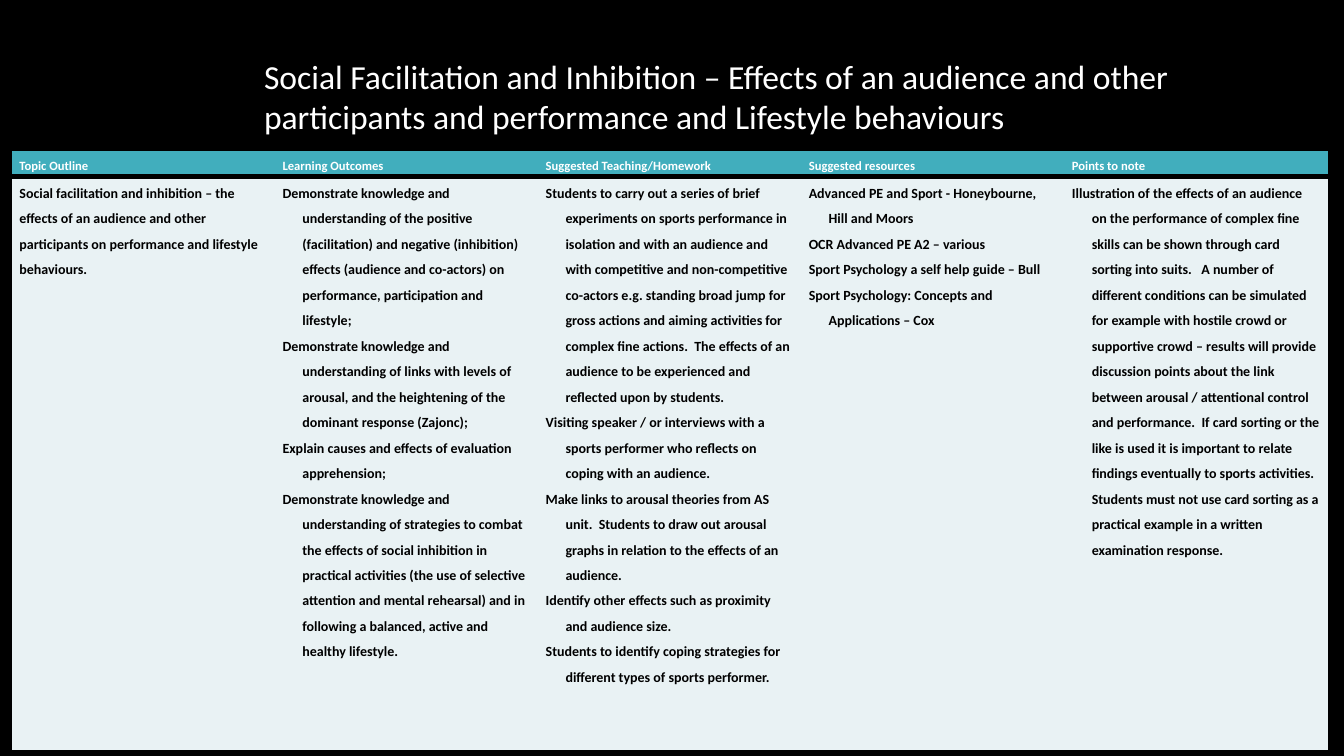
from lxml import etree
from pptx import Presentation
from pptx import util as u
from pptx.dml.color import RGBColor
from pptx.enum import text
from pptx.oxml import ns

BLACK = RGBColor(0x00, 0x00, 0x00)
WHITE = RGBColor(0xFF, 0xFF, 0xFF)
TEAL = RGBColor(0x41, 0xAE, 0xBD)
PALE = RGBColor(0xE9, 0xF2, 0xF4)
PLAIN_TABLE = "{2D5ABB26-0587-4C30-8999-92F81FD0307C}"

TITLE = ("Social Facilitation and Inhibition – Effects of an audience and other "
         "participants and performance and Lifestyle behaviours")

COLUMNS = [
    ("Topic Outline", [
        "Social facilitation and inhibition – the effects of an audience and other "
        "participants on performance and lifestyle behaviours.",
    ]),
    ("Learning Outcomes", [
        "Demonstrate knowledge and understanding of the positive (facilitation) and "
        "negative (inhibition) effects (audience and co-actors) on performance, "
        "participation and lifestyle;",
        "Demonstrate knowledge and understanding of links with levels of arousal, and "
        "the heightening of the dominant response (Zajonc);",
        "Explain causes and effects of evaluation apprehension;",
        "Demonstrate knowledge and understanding of strategies to combat the effects "
        "of social inhibition in practical activities (the use of selective attention "
        "and mental rehearsal) and in following a balanced, active and healthy "
        "lifestyle.",
    ]),
    ("Suggested Teaching/Homework", [
        "Students to carry out a series of brief experiments on sports performance in "
        "isolation and with an audience and with competitive and non-competitive "
        "co-actors e.g. standing broad jump for gross actions and aiming activities "
        "for complex fine actions.  The effects of an audience to be experienced and "
        "reflected upon by students.",
        "Visiting speaker / or interviews with a sports performer who reflects on "
        "coping with an audience.",
        "Make links to arousal theories from AS unit.  Students to draw out arousal "
        "graphs in relation to the effects of an audience.",
        "Identify other effects such as proximity and audience size.",
        "Students to identify coping strategies for different types of sports "
        "performer.",
    ]),
    ("Suggested resources", [
        "Advanced PE and Sport - Honeybourne, Hill and Moors",
        "OCR Advanced PE A2 – various",
        "Sport Psychology a self help guide – Bull",
        "Sport Psychology: Concepts and Applications – Cox",
    ]),
    ("Points to note", [
        "Illustration of the effects of an audience on the performance of complex fine "
        "skills can be shown through card sorting into suits.   A number of different "
        "conditions can be simulated for example with hostile crowd or supportive "
        "crowd – results will provide discussion points about the link between "
        "arousal / attentional control and performance.  If card sorting or the like "
        "is used it is important to relate findings eventually to sports activities.  "
        "Students must not use card sorting as a practical example in a written "
        "examination response.",
    ]),
]


class Deck:
    """Holds the presentation, its style and the current slide."""

    font = "Calibri"
    indent = u.Cm(0.5)

    def __init__(self):
        """Open a widescreen deck with one black title-only slide."""
        self.prs = Presentation()
        self.prs.slide_width, self.prs.slide_height = u.Cm(33.87), u.Cm(19.05)
        self.slide = self.prs.slides.add_slide(self.prs.slide_layouts[5])
        fill = self.slide.background.fill
        fill.solid()
        fill.fore_color.rgb = BLACK

    def run(self, p, words, size, color, bold=False):
        """Add one styled run to a paragraph."""
        r = p.add_run()
        r.text = words
        r.font.name, r.font.size, r.font.bold = self.font, u.Pt(size), bold
        r.font.color.rgb = color

    def title(self, words, left, top, width, height):
        """Place and fill the title placeholder."""
        sp = self.slide.shapes.title
        sp.left, sp.top, sp.width, sp.height = map(u.Cm, (left, top, width, height))
        tf = sp.text_frame
        tf.word_wrap = True
        tf.auto_size = text.MSO_AUTO_SIZE.NONE
        tf.vertical_anchor = text.MSO_ANCHOR.MIDDLE
        p = tf.paragraphs[0]
        p.alignment = text.PP_ALIGN.LEFT
        self.run(p, words, 24, WHITE)

    def hang(self, p):
        """Give a paragraph a hanging indent with a matching tab stop."""
        pPr = p._p.get_or_add_pPr()
        pPr.set("marL", str(self.indent))
        pPr.set("indent", str(-self.indent))
        tabs = etree.SubElement(pPr, ns.qn("a:tabLst"))
        etree.SubElement(tabs, ns.qn("a:tab"), pos=str(self.indent), algn="l")

    def rule_above(self, cell, points, color):
        """Draw a solid border along the top of a cell."""
        line = etree.Element(ns.qn("a:lnT"), w=str(u.Pt(points)))
        fill = etree.SubElement(line, ns.qn("a:solidFill"))
        etree.SubElement(fill, ns.qn("a:srgbClr"), val=str(color))
        cell._tc.get_or_add_tcPr().insert(0, line)

    def cell(self, cell, lines, size, color, fill, hanging):
        """Fill a table cell with bold paragraphs."""
        cell.margin_left = cell.margin_right = u.Cm(0.19)
        cell.margin_top = cell.margin_bottom = 0
        cell.fill.solid()
        cell.fill.fore_color.rgb = fill
        tf = cell.text_frame
        for i, words in enumerate(lines):
            p = tf.add_paragraph() if i else tf.paragraphs[0]
            if hanging:
                self.hang(p)
            p.line_spacing = 1.5
            self.run(p, words, size, color, bold=True)

    def table(self, columns, left, top, width, heights):
        """Add a table with one heading and one body cell per column."""
        frame = self.slide.shapes.add_table(
            2, len(columns), u.Cm(left), u.Cm(top), u.Cm(width), u.Cm(sum(heights)))
        table = frame.table
        table.horz_banding = False
        table._tbl.tblPr.find(ns.qn("a:tableStyleId")).text = PLAIN_TABLE
        for row, height in zip(table.rows, heights):
            row.height = u.Cm(height)
        for i, (heading, lines) in enumerate(columns):
            self.cell(table.cell(0, i), [heading], 9, WHITE, TEAL, i > 0)
            body = table.cell(1, i)
            self.cell(body, lines, 10, BLACK, PALE, i > 0)
            self.rule_above(body, 4, BLACK)


def main():
    """Build the lesson plan slide and save it."""
    deck = Deck()
    deck.title(TITLE, 6.4, 1.02, 25.12, 2.79)
    deck.table(COLUMNS, 0.3, 3.81, 33.16, (0.64, 14.45))
    deck.prs.save("out.pptx")


if __name__ == "__main__":
    main()
